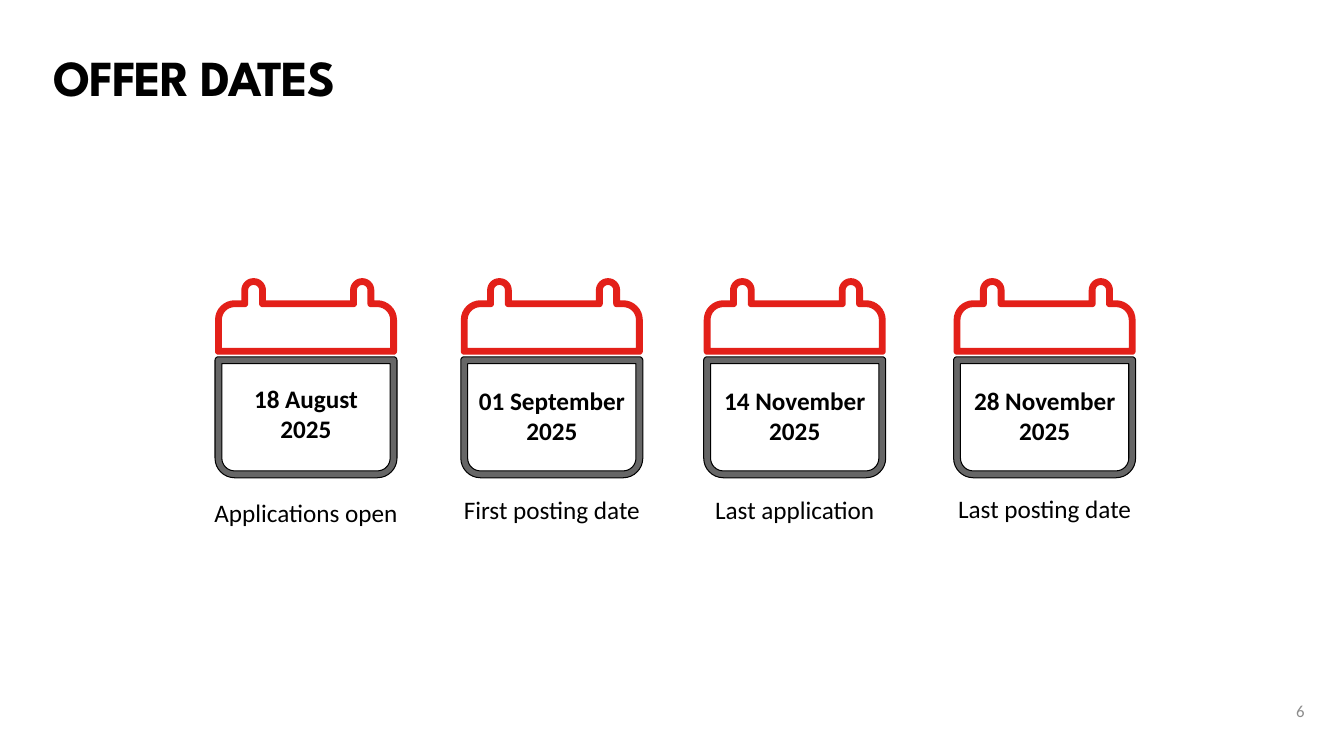
from dataclasses import dataclass

from pptx import Presentation
from pptx.dml.color import RGBColor
from pptx.enum.text import MSO_ANCHOR as Anchor, MSO_AUTO_SIZE as AutoSize, PP_ALIGN as Align
from pptx.util import Pt


@dataclass(frozen=True)
class Theme:
    black: RGBColor = RGBColor(0x00, 0x00, 0x00)
    red: RGBColor = RGBColor(0xE3, 0x20, 0x19)
    grey: RGBColor = RGBColor(0x66, 0x66, 0x66)
    pale: RGBColor = RGBColor(0x8C, 0x8C, 0x8C)
    title_font: str = "League Spartan"
    body_font: str = "Calibri"
    title_size: int = 36
    title_leading: int = 44
    body_size: int = 18
    number_size: int = 12


CAL_WIDTH, HEADER_TOP, HEADER_HEIGHT = 130, 198.7, 54.7
BODY_TOP, BODY_HEIGHT, FRAME = 254.9, 86.4, 4.9
SHOULDER, ROUND, TIGHT, RING_ROUND = 15.8, 14, 2.5, 8.6
RINGS = [(18.8, 36.4), (96.5, 113.8)]
STEPS = 8

# left, date, date top, date width, caption, caption top, caption width
CALENDARS = [
    (153.6, "18 August\n2025", 270, 89.3, "Applications open", 351.4, 146.9),
    (329.2, "01 September\n2025", 271.4, 119.5, "First posting date", 349.2, 141.8),
    (502.7, "14 November\n2025", 271.4, 116.6, "Last application", 349.2, 129.6),
    (681.2, "28 November\n2025", 271.4, 116.6, "Last posting date", 348.8, 139.7),
]


def header_corners(inset):
    """Corners (x, y, radius) of the header with its two rings, clockwise."""
    shoulder, right = SHOULDER + inset, CAL_WIDTH - inset
    base = HEADER_HEIGHT - inset
    corners = [(inset, shoulder, ROUND - inset)]
    for ring_left, ring_right in RINGS:
        x1, x2, radius = ring_left + inset, ring_right - inset, RING_ROUND - inset
        corners += [(x1, shoulder, inset / 2), (x1, inset, radius),
                    (x2, inset, radius), (x2, shoulder, inset / 2)]
    tight = max(TIGHT - inset, 0)
    return corners + [(right, shoulder, ROUND - inset), (right, base, tight), (inset, base, tight)]


def body_corners(inset):
    """Corners (x, y, radius) of the calendar page, clockwise."""
    right, base = CAL_WIDTH - inset, BODY_HEIGHT - inset
    tight = max(TIGHT - inset, 0)
    return [(inset, inset, tight), (right, inset, tight),
            (right, base, ROUND - inset), (inset, base, ROUND - inset)]


def toward(start, end, share):
    return tuple(a + (b - a) * share for a, b in zip(start, end))


def rounded(corners):
    """Points of the closed outline, with each corner drawn as a Bezier arc."""
    points = []
    for i, (x, y, radius) in enumerate(corners):
        corner = (x, y)
        if not radius:
            points.append(corner)
            continue
        before, after = corners[i - 1][:2], corners[(i + 1) % len(corners)][:2]
        ends = []
        for other in (before, after):
            length = abs(other[0] - x) + abs(other[1] - y)
            ends.append(toward(corner, other, radius / length))
        first, last = ends
        pull_first, pull_last = toward(first, corner, 0.55), toward(last, corner, 0.55)
        for step in range(STEPS + 1):
            t = step / STEPS
            weights = ((1 - t) ** 3, 3 * t * (1 - t) ** 2, 3 * t * t * (1 - t), t ** 3)
            arc = zip(first, pull_first, pull_last, last)
            points.append(tuple(sum(w * p for w, p in zip(weights, axis)) for axis in arc))
    return points


class Deck:
    def __init__(self, theme):
        self.theme = theme
        self.prs = Presentation()
        self.prs.slide_width, self.prs.slide_height = Pt(960), Pt(540)
        self.slide = self.prs.slides.add_slide(self.prs.slide_layouts[5])

    def style(self, paragraph, align, font, size, color, bold=False):
        paragraph.alignment = align
        for run in paragraph.runs:
            run.font.name, run.font.size, run.font.bold = font, Pt(size), bold
            run.font.color.rgb = color

    def title(self, text, left, top, width, height):
        title = self.slide.shapes.title
        title.left, title.top, title.width, title.height = map(Pt, (left, top, width, height))
        frame = title.text_frame
        frame.margin_left = frame.margin_right = frame.margin_top = frame.margin_bottom = 0
        frame.vertical_anchor, frame.auto_size = Anchor.TOP, AutoSize.NONE
        frame.text = text
        heading = frame.paragraphs[0]
        heading.line_spacing = Pt(self.theme.title_leading)
        self.style(heading, Align.LEFT, self.theme.title_font, self.theme.title_size,
                   self.theme.black, True)
        heading.runs[0].font._element.set("spc", "-100")

    def label(self, text, center, top, width, height, bold=False):
        box = self.slide.shapes.add_textbox(Pt(center - width / 2), Pt(top), Pt(width), Pt(height))
        frame = box.text_frame
        frame.word_wrap, frame.auto_size = False, AutoSize.SHAPE_TO_FIT_TEXT
        frame.text = text
        for line in frame.paragraphs:
            self.style(line, Align.CENTER, self.theme.body_font, self.theme.body_size,
                       self.theme.black, bold)

    def page_number(self, text, left, top, width, height):
        box = self.slide.shapes.add_textbox(Pt(left), Pt(top), Pt(width), Pt(height))
        frame = box.text_frame
        frame.word_wrap, frame.vertical_anchor = True, Anchor.MIDDLE
        frame.text = text
        self.style(frame.paragraphs[0], Align.RIGHT, self.theme.body_font,
                   self.theme.number_size, self.theme.pale)

    def frame(self, group, corners_at, left, top, fill, line=None):
        """Draw a hollow band between an outline and the same outline inset."""
        outer, inner = ([(Pt(left + x), Pt(top + y)) for x, y in rounded(corners_at(inset))]
                        for inset in (0, FRAME))
        inner.reverse()
        builder = group.shapes.build_freeform(*outer[0], scale=1.0)
        builder.add_line_segments(outer[1:], close=True)
        builder.move_to(*inner[0])
        builder.add_line_segments(inner[1:], close=True)
        band = builder.convert_to_shape()
        band.shadow.inherit = False
        band.fill.solid()
        band.fill.fore_color.rgb = fill
        if line is None:
            band.line.fill.background()
        else:
            band.line.color.rgb, band.line.width = line, Pt(0.75)

    def calendar(self, left):
        group = self.slide.shapes.add_group_shape()
        self.frame(group, header_corners, left, HEADER_TOP, self.theme.red)
        self.frame(group, body_corners, left, BODY_TOP, self.theme.grey, self.theme.black)


def main():
    deck = Deck(Theme())
    deck.title("OFFER DATES", 38.2, 32.4, 792.7, 37.4)
    deck.page_number("6", 909.4, 493.2, 29.5, 28.8)
    for left, date, date_top, date_width, caption, caption_top, caption_width in CALENDARS:
        center = left + CAL_WIDTH / 2
        deck.calendar(left)
        deck.label(date, center, date_top, date_width, 51.1, bold=True)
        deck.label(caption, center, caption_top, caption_width, 28.8)
    deck.prs.save("out.pptx")


if __name__ == "__main__":
    main()
